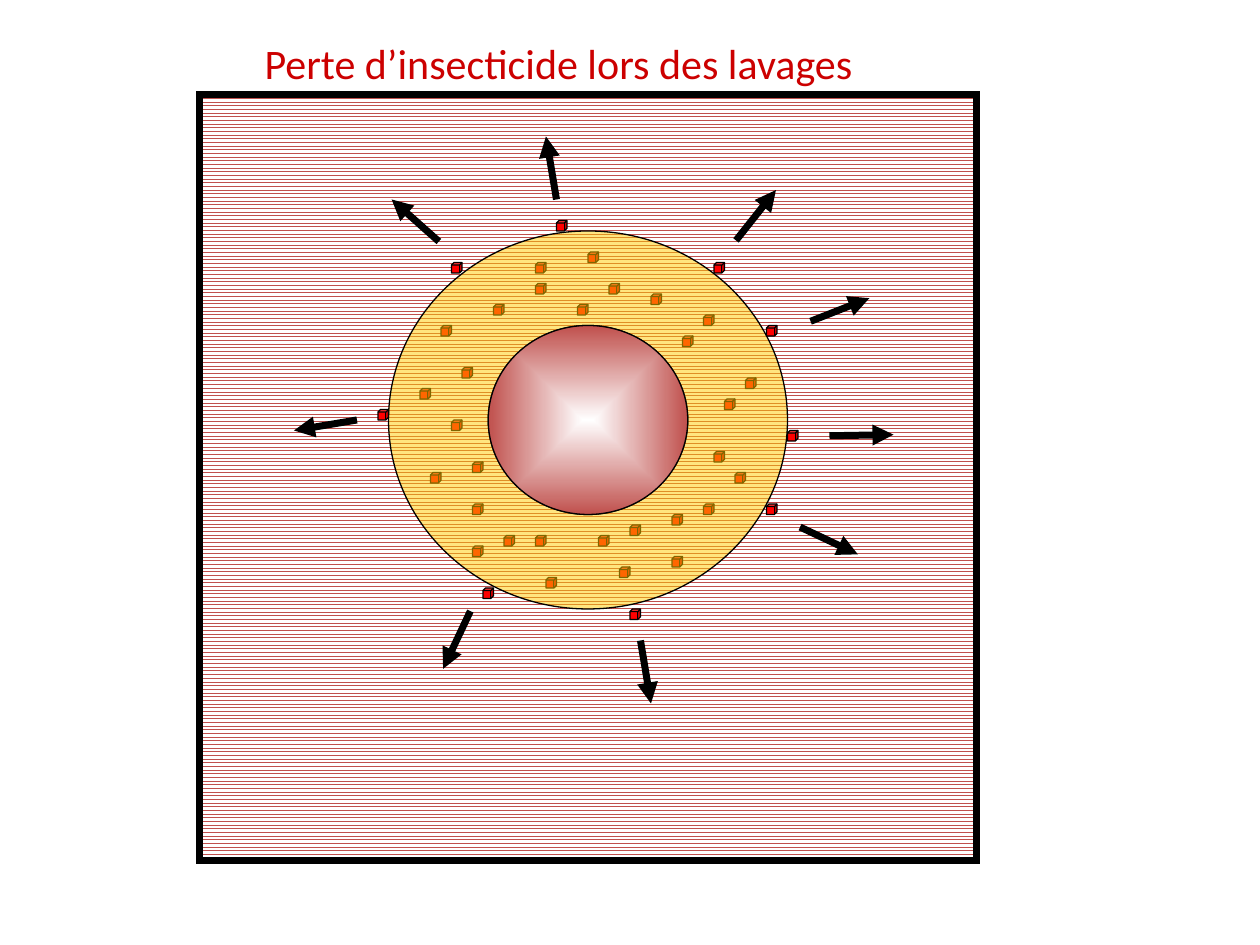
from lxml.etree import SubElement
from pptx import Presentation
from pptx.dml.color import RGBColor
from pptx.enum.dml import MSO_PATTERN
from pptx.enum.shapes import MSO_CONNECTOR, MSO_SHAPE
from pptx.enum.text import MSO_ANCHOR, MSO_AUTO_SIZE, PP_ALIGN
from pptx.oxml.ns import qn
from pptx.util import Inches, Pt

COLORS = {
    "title": "CC0000",
    "outline": "000000",
    "fibre": "C0504D",
    "light": "FFFFFF",
    "coating": "FFCC00",
    "insecticide": "FF0000",
}
CELLS_PER_INCH = 12
CURVE = 0.55
FRAME = (19, 9, 74, 73)
COATING = (37, 22, 38, 36)
CORE = (46.5, 31, 19, 18)
TITLE = (24, 3, 71, 6)

INNER_PARTICLES = [
    (68, 43), (65, 32), (71, 36), (64, 49), (62, 28), (44, 35),
    (67, 30), (59, 54), (51, 51), (45, 48), (47, 29), (58, 27),
    (52, 55), (60, 50), (43, 40), (51, 27), (41, 45), (42, 31),
    (67, 48), (64, 53), (45, 52), (56, 24), (69, 38), (70, 45),
    (57, 51), (40, 37), (51, 25), (55, 29), (45, 44), (48, 51),
]
RELEASED_PARTICLES = [
    (73, 48), (75, 41), (68, 25), (73, 31), (60, 58),
    (53, 21), (46, 56), (36, 39), (43, 25),
]
ARROWS = [
    (61, 61, 62, 67), (76.2, 50.2, 81.7, 52.8), (44.8, 58.2, 42.2, 63.7),
    (34, 40, 28, 41), (41.8, 23, 37.3, 19), (53, 19, 52, 13),
    (70.1, 22.9, 73.9, 18.1), (77.2, 30.6, 82.8, 28.4), (79, 41.5, 85.1, 41.4),
]


def cells(*counts):
    return [Inches(count / CELLS_PER_INCH) for count in counts]


def color(name):
    return RGBColor.from_string(COLORS[name])


def set_outline(shape, width=0.75):
    shape.line.color.rgb = color("outline")
    shape.line.width = Pt(width)


def add_plain_shape(shapes, kind, box):
    shape = shapes.add_shape(kind, *cells(*box))
    shape.shadow.inherit = False
    return shape


def add_title(slide, text):
    title = slide.shapes.title
    title.left, title.top, title.width, title.height = cells(*TITLE)
    frame = title.text_frame
    frame.text = text
    frame.word_wrap = True
    frame.auto_size = MSO_AUTO_SIZE.NONE
    frame.vertical_anchor = MSO_ANCHOR.MIDDLE
    paragraph = frame.paragraphs[0]
    paragraph.alignment = PP_ALIGN.LEFT
    paragraph.font.name = "Calibri"
    paragraph.font.size = Pt(24)
    paragraph.font.color.rgb = color("title")


def add_water(shapes):
    water = add_plain_shape(shapes, MSO_SHAPE.RECTANGLE, FRAME)
    water.fill.patterned()
    water.fill.pattern = MSO_PATTERN.ZIG_ZAG
    water.fill.fore_color.rgb = color("fibre")
    water.fill.back_color.rgb = color("light")
    water.line.fill.background()
    border = add_plain_shape(shapes, MSO_SHAPE.RECTANGLE, FRAME)
    border.fill.background()
    set_outline(border, 4)
    SubElement(border.line._get_or_add_ln(), qn("a:miter"), lim="800000")


def add_particles(shapes, positions):
    for column, row in positions:
        cube = add_plain_shape(shapes, MSO_SHAPE.CUBE, (column, row, 1, 1))
        cube.fill.solid()
        cube.fill.fore_color.rgb = color("insecticide")
        set_outline(cube)


def add_point(parent, x, y):
    SubElement(parent, qn("a:pt"), x=str(round(x)), y=str(round(y)))


def add_ellipse_contour(outline, box, direction):
    left, top, width, height = cells(*box)
    origin_x, origin_y = cells(*COATING[:2])
    center_x, center_y = left + width / 2 - origin_x, top + height / 2 - origin_y

    def place(parent, x, y):
        add_point(parent, center_x + x * width / 2, center_y + y * height / 2)

    corners = [(-1, 0), (0, -direction), (1, 0), (0, direction), (-1, 0)]
    place(SubElement(outline, qn("a:moveTo")), *corners[0])
    for (x1, y1), (x2, y2) in zip(corners, corners[1:]):
        curve = SubElement(outline, qn("a:cubicBezTo"))
        place(curve, x1 + CURVE * x2, y1 + CURVE * y2)
        place(curve, x2 + CURVE * x1, y2 + CURVE * y1)
        place(curve, x2, y2)
    SubElement(outline, qn("a:close"))


def add_coating(shapes):
    left, top, width, height = cells(*COATING)
    builder = shapes.build_freeform(left, top)
    builder.add_line_segments([(left + width, top), (left + width, top + height)])
    ring = builder.convert_to_shape()
    outline = ring._element.spPr.find(".//" + qn("a:path"))
    for segment in list(outline):
        outline.remove(segment)
    add_ellipse_contour(outline, COATING, 1)
    add_ellipse_contour(outline, CORE, -1)
    ring.shadow.inherit = False
    ring.fill.solid()
    ring.fill.fore_color.rgb = color("coating")
    fill_color = ring._element.spPr.find(qn("a:solidFill"))[0]
    SubElement(fill_color, qn("a:alpha"), val="50000")
    set_outline(ring)


def add_core(shapes):
    core = add_plain_shape(shapes, MSO_SHAPE.OVAL, CORE)
    core.fill.gradient()
    for stop, name in zip(core.fill.gradient_stops, ("light", "fibre")):
        stop.color.rgb = color(name)
    gradient = core._element.spPr.find(qn("a:gradFill"))
    gradient.remove(gradient.find(qn("a:lin")))
    shading = SubElement(gradient, qn("a:path"), path="shape")
    SubElement(shading, qn("a:fillToRect"), l="50000", t="50000", r="50000", b="50000")
    set_outline(core)


def add_arrow(shapes, ends):
    arrow = shapes.add_connector(MSO_CONNECTOR.STRAIGHT, *cells(*ends))
    set_outline(arrow, 4)
    SubElement(arrow.line._get_or_add_ln(), qn("a:tailEnd"), type="triangle")
    SubElement(arrow._element.spPr, qn("a:effectLst"))


def main():
    presentation = Presentation()
    presentation.slide_width = Inches(10)
    presentation.slide_height = Inches(7.5)
    slide = presentation.slides.add_slide(presentation.slide_layouts[5])
    add_title(slide, "Perte d’insecticide lors des lavages")
    add_water(slide.shapes)

    fibre = slide.shapes.add_group_shape().shapes
    add_particles(fibre, INNER_PARTICLES)
    add_coating(fibre)
    add_core(fibre)

    released = slide.shapes.add_group_shape().shapes
    add_particles(released, RELEASED_PARTICLES)

    arrows = slide.shapes.add_group_shape().shapes
    for ends in ARROWS:
        add_arrow(arrows, ends)
    presentation.save("out.pptx")


if __name__ == "__main__":
    main()
